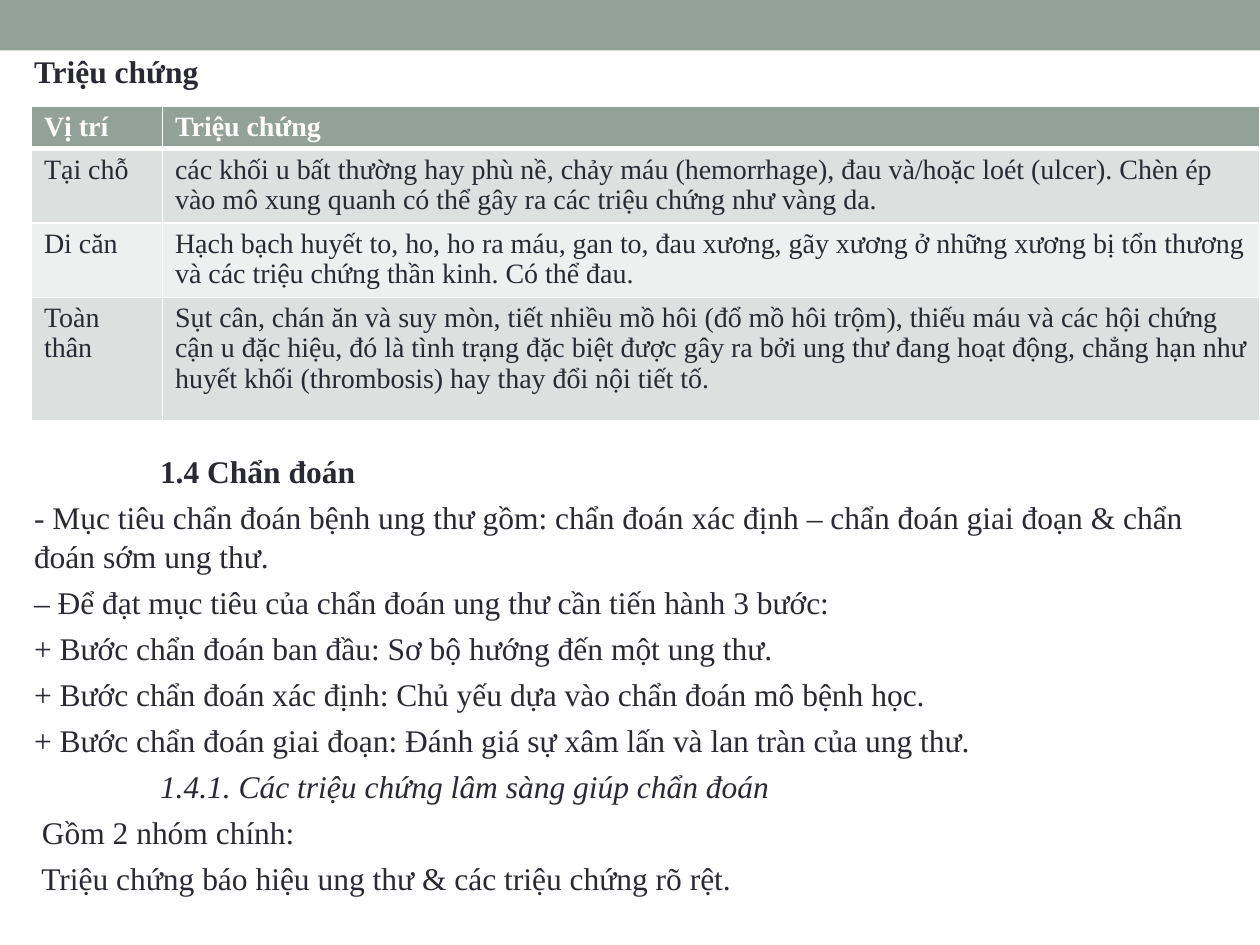
from dataclasses import dataclass
from lxml.etree import SubElement
from pptx import Presentation
from pptx.dml.color import RGBColor
from pptx.enum.shapes import MSO_SHAPE
from pptx.enum.text import MSO_ANCHOR, MSO_AUTO_SIZE
from pptx.oxml.ns import qn
from pptx.util import Inches, Pt

SAGE = RGBColor(0x93, 0xA2, 0x99)
INK = RGBColor(0x29, 0x29, 0x34)
WHITE = RGBColor(0xFF, 0xFF, 0xFF)
BANDS = (RGBColor(0xDC, 0xE0, 0xDE), RGBColor(0xEE, 0xF0, 0xEF))
FONT = "Times New Roman"
WIDE, HIGH = Inches(10), Inches(7.5)
COLS = (1.04, 8.71)
ROWS = (0.34, 0.59, 0.59, 0.98)


@dataclass
class Line:
    text: str
    bold: bool = False
    slant: bool = False
    inset: float = 0
    gap: float = 3.6


LINES = (
    Line("Triệu chứng", bold=True),
    Line("1.4 Chẩn đoán", bold=True, inset=1, gap=205.6),
    Line("- Mục tiêu chẩn đoán bệnh ung thư gồm: chẩn đoán xác định – chẩn đoán giai đoạn & chẩn đoán sớm ung thư."),
    Line("‒ Để đạt mục tiêu của chẩn đoán ung thư cần tiến hành 3 bước:"),
    Line("+ Bước chẩn đoán ban đầu: Sơ bộ hướng đến một ung thư."),
    Line("+ Bước chẩn đoán xác định: Chủ yếu dựa vào chẩn đoán mô bệnh học."),
    Line("+ Bước chẩn đoán giai đoạn: Đánh giá sự xâm lấn và lan tràn của ung thư."),
    Line("1.4.1. Các triệu chứng lâm sàng giúp chẩn đoán", slant=True, inset=1),
    Line(" Gồm 2 nhóm chính:"),
    Line(" Triệu chứng báo hiệu ung thư & các triệu chứng rõ rệt."),
)

CELLS = (
    ("Vị trí", "Triệu chứng"),
    ("Tại chỗ", "các khối u bất thường hay phù nề, chảy máu (hemorrhage), đau và/hoặc loét (ulcer). "
     "Chèn ép vào mô xung quanh có thể gây ra các triệu chứng như vàng da."),
    ("Di căn", "Hạch bạch huyết to, ho, ho ra máu, gan to, đau xương, gãy xương ở những xương bị tổn thương "
     "và các triệu chứng thần kinh. Có thể đau."),
    ("Toàn thân", "Sụt cân, chán ăn và suy mòn, tiết nhiều mồ hôi (đổ mồ hôi trộm), thiếu máu và các hội chứng "
     "cận u đặc hiệu, đó là tình trạng đặc biệt được gây ra bởi ung thư đang hoạt động, chẳng hạn như "
     "huyết khối (thrombosis) hay thay đổi nội tiết tố."),
)


def add_run(para, text: str, size: float, color: RGBColor, bold: bool, slant: bool = False) -> None:
    run = para.add_run()
    run.text = text
    font = run.font
    font.name, font.size = FONT, Pt(size)
    font.bold, font.italic = bold, slant
    font.color.rgb = color


def add_bar(slide) -> None:
    bar = slide.shapes.add_shape(MSO_SHAPE.RECTANGLE, 0, 0, WIDE, Inches(0.4))
    bar.shadow.inherit = False
    bar.fill.solid()
    bar.fill.fore_color.rgb = SAGE
    bar.line.fill.background()


def fill_body(body) -> None:
    body.left, body.top = Inches(0.17), Inches(0.35)
    body.width, body.height = WIDE - body.left, HIGH - body.top
    frame = body.text_frame
    frame.word_wrap = True
    frame.auto_size = MSO_AUTO_SIZE.NONE
    frame.vertical_anchor = MSO_ANCHOR.TOP
    for i, line in enumerate(LINES):
        para = frame.add_paragraph() if i else frame.paragraphs[0]
        para.line_spacing = 1.05
        para.space_before = Pt(line.gap)
        props = para._p.get_or_add_pPr()
        props.set("marL", str(Inches(line.inset)))
        props.set("indent", "0")
        SubElement(props, qn("a:buNone"))
        add_run(para, line.text, 18, INK, line.bold, line.slant)


def set_edges(cell, foot: float) -> None:
    props = cell._tc.get_or_add_tcPr()
    for side, width in (("L", 1), ("R", 1), ("T", 1), ("B", foot)):
        edge = SubElement(props, qn(f"a:ln{side}"), w=str(Pt(width)))
        paint = SubElement(edge, qn("a:solidFill"))
        SubElement(paint, qn("a:srgbClr"), val=str(WHITE))


def add_grid(slide) -> None:
    table = slide.shapes.add_table(
        len(ROWS), len(COLS), Inches(0.25), Inches(0.84), Inches(sum(COLS)), Inches(sum(ROWS))
    ).table
    for col, width in zip(table.columns, COLS):
        col.width = Inches(width)
    for r, (texts, height) in enumerate(zip(CELLS, ROWS)):
        table.rows[r].height = Inches(height)
        head = r == 0
        for c, text in enumerate(texts):
            cell = table.cell(r, c)
            set_edges(cell, 3 if head else 1)
            cell.fill.solid()
            cell.fill.fore_color.rgb = SAGE if head else BANDS[(r - 1) % 2]
            para = cell.text_frame.paragraphs[0]
            para.line_spacing = 0.97
            add_run(para, text, 16, WHITE if head else INK, head)
        if head:
            continue
        for cell in table.rows[r].cells:
            top = cell._tc.tcPr.find(qn("a:lnT"))
            top.set("w", str(Pt(3 if r == 1 else 1)))


def main() -> None:
    deck = Presentation()
    deck.slide_width, deck.slide_height = WIDE, HIGH
    slide = deck.slides.add_slide(deck.slide_layouts[1])
    title = slide.shapes.title._element
    title.getparent().remove(title)
    add_bar(slide)
    fill_body(slide.placeholders[1])
    add_grid(slide)
    deck.save("out.pptx")


if __name__ == "__main__":
    main()
